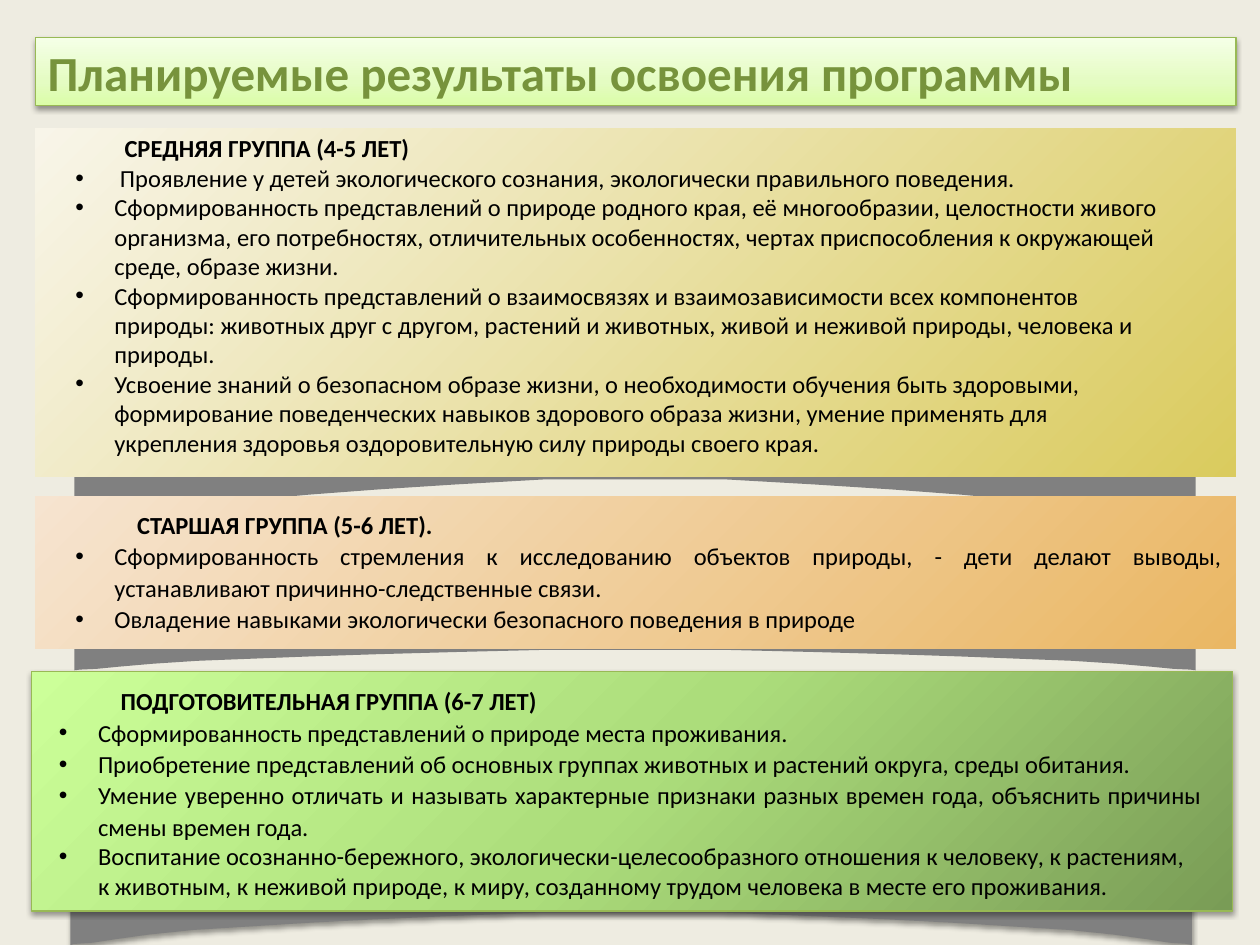
import pptx
import pptx.util
import pptx.oxml
import pptx.oxml.ns
import pptx.dml.color
import pptx.enum.shapes
import pptx.enum.text
import lxml.etree

Inches = pptx.util.Inches
Pt = pptx.util.Pt
RGB = pptx.dml.color.RGBColor
Align = pptx.enum.text.PP_ALIGN
qn = pptx.oxml.ns.qn

BACK = RGB(0xEE, 0xEC, 0xE1)
BLACK = RGB(0x00, 0x00, 0x00)
GREY = RGB(0x80, 0x80, 0x80)
OLIVE = RGB(0x77, 0x93, 0x3C)
EDGE = RGB(0x98, 0xB9, 0x55)
LIME = [(0, RGB(0xDA, 0xFD, 0xA7)), (35, RGB(0xE4, 0xFC, 0xC2)),
        (100, RGB(0xF5, 0xFF, 0xE7))]
SAND = [(0, RGB(0xF8, 0xF5, 0xE9)), (100, RGB(0xDA, 0xCB, 0x5E))]
PEACH = [(0, RGB(0xF6, 0xE4, 0xD0)), (100, RGB(0xEA, 0xB7, 0x64))]
GREEN = [(0, RGB(0x79, 0x9C, 0x56)), (50, RGB(0xAC, 0xDD, 0x7B)),
         (100, RGB(0xCC, 0xFF, 0x99))]

HALF = [(0, 1), (0.005, 0.99), (0.02, 0.98), (0.04, 0.95), (0.07, 0.91),
        (0.11, 0.87), (0.16, 0.84), (0.21, 0.81), (0.27, 0.78),
        (0.34, 0.75), (0.42, 0.72)]
ARC = [(1 - x, y) for x, y in HALF] + [(0.5, 0.72)] + HALF[::-1]
CURVE = ARC + [(0, 0.25), (0.5, 0), (1, 0.25)]

LEFT = {"alignment": Align.LEFT}
JUST = {"alignment": Align.JUSTIFY, "line_spacing": 1.07}

GROUPS = [
    {"curve": (0.59, 2.84, 8.9, 1.34), "panel": (0.28, 1.02, 9.53, 2.76),
     "stops": SAND, "angle": 45, "raised": False,
     "text": (0.5, 1.01, 8.9, 2.69), "indent": 0.39,
     "head": ("СРЕДНЯЯ ГРУППА (4-5 ЛЕТ)", LEFT),
     "items": [
         (" Проявление у детей экологического сознания, экологически правильного поведения.", LEFT),
         ("Сформированность представлений о природе родного края, её многообразии, целостности живого "
          "организма, его потребностях, отличительных особенностях, чертах приспособления к окружающей "
          "среде, образе жизни.", LEFT),
         ("Сформированность представлений о взаимосвязях и взаимозависимости всех компонентов "
          "природы: животных друг с другом, растений и животных, живой и неживой природы, человека и "
          "природы.", LEFT),
         ("Усвоение знаний о безопасном образе жизни, о необходимости обучения быть здоровыми, "
          "формирование поведенческих навыков здорового образа жизни, умение применять для "
          "укрепления здоровья оздоровительную силу природы своего края.", LEFT)]},
    {"curve": (0.59, 4.74, 8.9, 0.58), "panel": (0.28, 3.94, 9.53, 1.21),
     "stops": PEACH, "angle": 45, "raised": False,
     "text": (0.5, 3.98, 9.3, 1.11), "indent": 0.49,
     "head": ("СТАРШАЯ ГРУППА (5-6 ЛЕТ).", JUST),
     "items": [
         ("Сформированность стремления к исследованию объектов природы, - дети делают выводы, "
          "устанавливают причинно-следственные связи.", JUST),
         ("Овладение навыками экологически безопасного поведения в природе", JUST)]},
    {"curve": (0.56, 6.58, 8.9, 0.92), "panel": (0.25, 5.33, 9.53, 1.9),
     "stops": GREEN, "angle": 225, "raised": True,
     "text": (0.37, 5.38, 9.27, 1.83), "indent": 0.49,
     "head": ("ПОДГОТОВИТЕЛЬНАЯ ГРУППА (6-7 ЛЕТ)", JUST),
     "items": [
         ("Сформированность представлений о природе места проживания.", JUST),
         ("Приобретение представлений об основных группах животных и растений округа, среды обитания.", JUST),
         ("Умение уверенно отличать и называть характерные признаки разных времен года, объяснить причины "
          "смены времен года.", JUST),
         ("Воспитание осознанно-бережного, экологически-целесообразного отношения к человеку, к растениям, к "
          "животным, к неживой природе, к миру, созданному трудом человека в месте его проживания.", LEFT)]},
]


def apply(target, values):
    for name, value in values.items():
        setattr(target, name, value)


def add_node(parent, tag, **values):
    return lxml.etree.SubElement(parent, qn(tag), **values)


def set_shade(shape, raised):
    shape.shadow.inherit = False
    if raised:
        effects = shape._element.spPr.find(qn("a:effectLst"))
        shade = add_node(effects, "a:outerShdw", blurRad=str(Pt(3.1)), dist=str(Pt(1.6)),
                         dir="5400000", rotWithShape="0")
        color = add_node(shade, "a:srgbClr", val=str(BLACK))
        add_node(color, "a:alpha", val="38000")


def add_panel(slide, place, stops, angle, raised):
    kind = pptx.enum.shapes.MSO_SHAPE.RECTANGLE
    panel = slide.shapes.add_shape(kind, *map(Inches, place))
    panel.fill.gradient()
    panel.fill.gradient_angle = 360 - angle
    nodes = panel._element.spPr.find(".//" + qn("a:gsLst"))
    for node in list(nodes):
        nodes.remove(node)
    for spot, color in stops:
        stop = add_node(nodes, "a:gs", pos=str(spot * 1000))
        add_node(stop, "a:srgbClr", val=str(color))
    if raised:
        panel.line.color.rgb = EDGE
        panel.line.width = Pt(0.75)
    else:
        panel.line.fill.background()
    set_shade(panel, raised)
    return panel


def add_curve(slide, place, raised):
    left, top, width, height = place
    points = [(Inches(left + x * width), Inches(top + y * height)) for x, y in CURVE]
    pen = slide.shapes.build_freeform(*points[0])
    pen.add_line_segments(points[1:], close=True)
    curve = pen.convert_to_shape()
    curve.fill.solid()
    curve.fill.fore_color.rgb = GREY
    curve.line.fill.background()
    set_shade(curve, raised)


def write(para, text, size, color, bold, form):
    apply(para, form)
    run = para.add_run()
    run.text = text
    apply(run.font, {"name": "Calibri", "size": Pt(size), "bold": bold})
    run.font.color.rgb = color


def set_indent(para, margin, indent):
    props = para._p.get_or_add_pPr()
    props.set("marL", str(Inches(margin)))
    props.set("indent", str(Inches(indent)))
    return props


def add_list(slide, group):
    frame = slide.shapes.add_textbox(*map(Inches, group["text"])).text_frame
    apply(frame, {"word_wrap": True,
                  "auto_size": pptx.enum.text.MSO_AUTO_SIZE.SHAPE_TO_FIT_TEXT})
    head = frame.paragraphs[0]
    text, form = group["head"]
    write(head, text, 14, BLACK, True, form)
    set_indent(head, 0, group["indent"])
    for text, form in group["items"]:
        para = frame.add_paragraph()
        write(para, text, 14, BLACK, False, form)
        props = set_indent(para, 0.31, -0.31)
        add_node(props, "a:buFont", typeface="Arial")
        add_node(props, "a:buChar", char="•")


def add_title(slide):
    title = add_panel(slide, (0.28, 0.3, 9.53, 0.54), LIME, 270, True)
    frame = title.text_frame
    apply(frame, {"word_wrap": True, "vertical_anchor": pptx.enum.text.MSO_ANCHOR.MIDDLE})
    write(frame.paragraphs[0], "Планируемые результаты освоения программы", 28, OLIVE, True, LEFT)


def main():
    deck = pptx.Presentation()
    apply(deck, {"slide_width": Inches(10), "slide_height": Inches(7.5)})
    slide = deck.slides.add_slide(deck.slide_layouts[6])
    slide.background.fill.solid()
    slide.background.fill.fore_color.rgb = BACK
    add_title(slide)
    for group in GROUPS:
        add_curve(slide, group["curve"], group["raised"])
        add_panel(slide, group["panel"], group["stops"], group["angle"], group["raised"])
        add_list(slide, group)
    deck.save("out.pptx")


if __name__ == "__main__":
    main()
